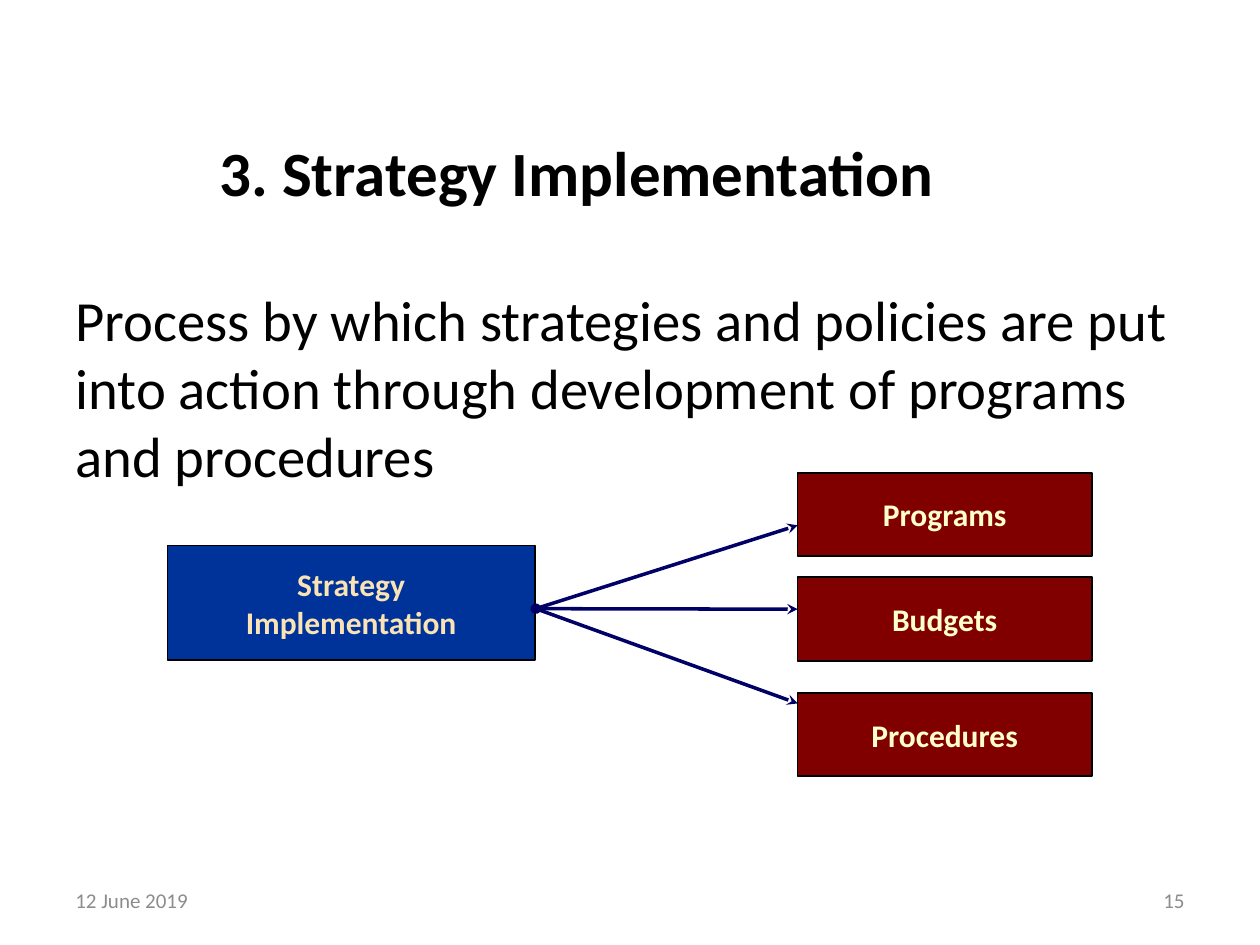
import pptx
import pptx.util
import pptx.dml.color
import pptx.enum.shapes
import pptx.enum.text
import lxml.etree

Cm = pptx.util.Cm
Pt = pptx.util.Pt
ALIGN = pptx.enum.text.PP_ALIGN
RGB = pptx.dml.color.RGBColor.from_string
COLORS = {
    "text": "000000", "footer": "8C8C8C", "outline": "000000",
    "blue": "003399", "cream": "FAE3B4",
    "red": "800000", "yellow": "FFFFCC", "arrow": "000066",
}

prs = pptx.Presentation()
prs.slide_width, prs.slide_height = Cm(25.4), Cm(19.05)
s = prs.slides.add_slide(prs.slide_layouts[6])


def add_text(text, x, y, w, h, size=18, color="text", bold=False,
             align=ALIGN.LEFT, fill=None):
    """Add a text box, or an outlined rectangle when a fill is given."""
    box = (Cm(x), Cm(y), Cm(w), Cm(h))
    if fill:
        sp = s.shapes.add_shape(pptx.enum.shapes.MSO_SHAPE.RECTANGLE, *box)
        sp.shadow.inherit = False
        sp.fill.solid()
        sp.fill.fore_color.rgb = RGB(COLORS[fill])
        sp.line.color.rgb = RGB(COLORS["outline"])
        sp.line.width = Pt(1)
    else:
        sp = s.shapes.add_textbox(*box)
    tf = sp.text_frame
    tf.word_wrap = not fill
    tf.vertical_anchor = pptx.enum.text.MSO_ANCHOR.MIDDLE
    for i, line in enumerate(text.split("\n")):
        p = tf.paragraphs[0] if i == 0 else tf.add_paragraph()
        p.alignment = align
        r = p.add_run()
        r.text = line
        r.font.name = "Calibri"
        r.font.size = Pt(size)
        r.font.bold = bold
        r.font.color.rgb = RGB(COLORS[color])
    return sp


# Title and definition
add_text("3. Strategy Implementation", 4.17, 2.5, 18, 1.9, size=36, bold=True)
add_text("Process by which strategies and policies are put into action "
         "through development of programs and procedures",
         1.27, 5.5, 22.86, 4.6, size=32.4)

# Strategy box
add_text("Strategy\nImplementation", 3.38, 11, 7.4, 2.31, color="cream",
         bold=True, align=ALIGN.CENTER, fill="blue")

# Arrows fanning out from one point, with a dot at their start
for i, end_y in enumerate((10.59, 12.28, 14.18)):
    c = s.shapes.add_connector(pptx.enum.shapes.MSO_CONNECTOR.STRAIGHT,
                               Cm(10.8), Cm(12.27), Cm(16.08), Cm(end_y))
    c.line.color.rgb = RGB(COLORS["arrow"])
    c.line.width = Pt(2)
    ln = c.line._get_or_add_ln()
    if i == 0:
        lxml.etree.SubElement(ln, pptx.oxml.ns.qn("a:headEnd"), type="oval")
    lxml.etree.SubElement(ln, pptx.oxml.ns.qn("a:tailEnd"), type="stealth")
    lxml.etree.SubElement(c._element.spPr, pptx.oxml.ns.qn("a:effectLst"))

# Outcome boxes
for label, y in (("Programs", 9.53), ("Budgets", 11.64), ("Procedures", 13.97)):
    add_text(label, 16.08, y, 5.93, 1.68, color="yellow", bold=True,
             align=ALIGN.CENTER, fill="red")

# Footer
add_text("12 June 2019", 1.27, 17.65, 5.93, 1.01, size=12, color="footer")
add_text("15", 18.2, 17.65, 5.93, 1.01, size=12, color="footer",
         align=ALIGN.RIGHT)

prs.save("out.pptx")
